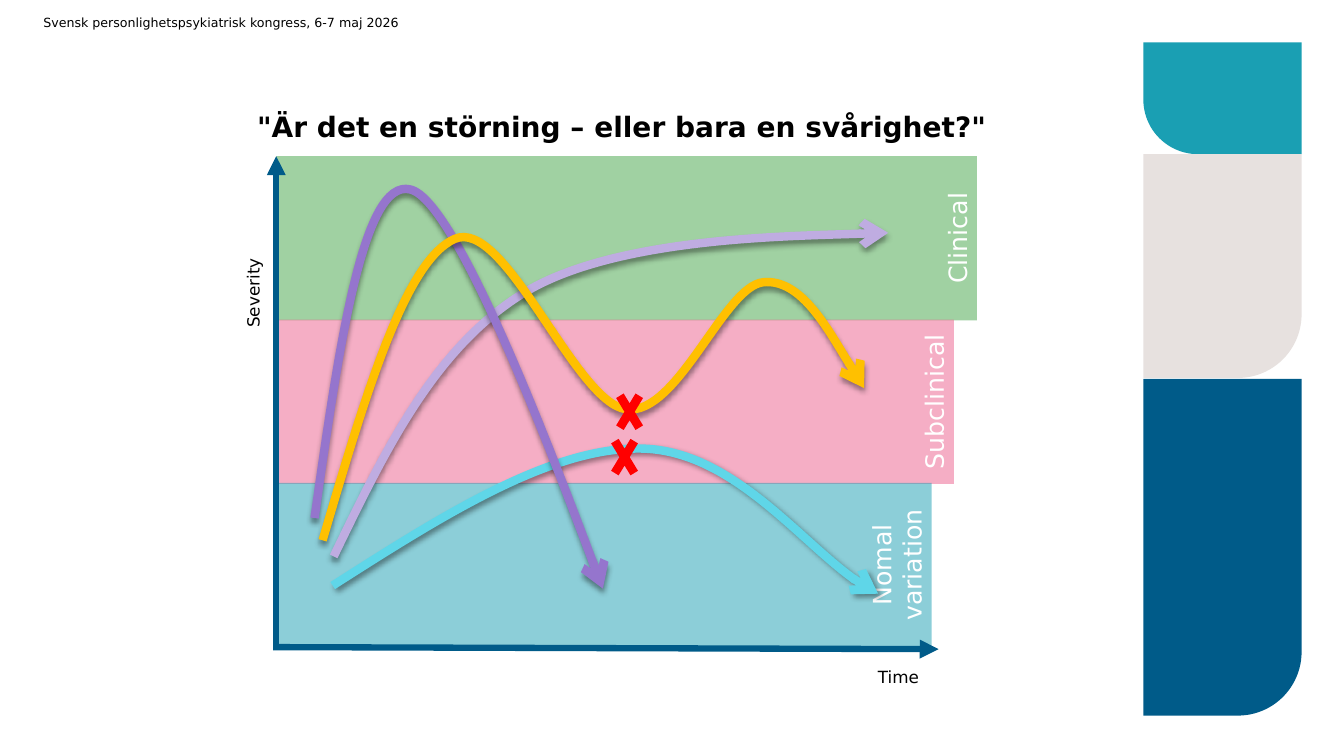
from lxml import etree
from pptx import Presentation
from pptx.dml.color import RGBColor
from pptx.enum.shapes import MSO_CONNECTOR, MSO_SHAPE as SHAPE
from pptx.enum.text import MSO_ANCHOR as ANCHOR, PP_ALIGN as ALIGN
from pptx.oxml import parse_xml
from pptx.oxml.ns import nsdecls, qn
from pptx.util import Inches, Pt

COLORS = {
    "teal": "1A9FB3", "sand": "E7E1DF", "navy": "005B89",
    "green": "43A447", "pink": "ED5F8C", "lilac": "BFACE1",
    "cyan": "5FD6E8", "purple": "9575CD", "orange": "FFC000",
    "red": "FF0000", "black": "000000", "white": "FFFFFF",
}

prs = Presentation()
prs.slide_width, prs.slide_height = Inches(13.33), Inches(7.5)
s = prs.slides.add_slide(prs.slide_layouts[6])


def write(sp, text, size, color="black", bold=False, align=ALIGN.LEFT,
          anchor=ANCHOR.TOP, inset=True):
    tf = sp.text_frame
    tf.word_wrap = True
    tf.vertical_anchor = anchor
    if not inset:
        tf.margin_left = tf.margin_right = tf.margin_top = tf.margin_bottom = 0
    p = tf.paragraphs[0]
    p.alignment = align
    r = p.add_run()
    r.text = text
    r.font.name, r.font.size, r.font.bold = "DejaVu Sans", Pt(size), bold
    r.font.color.rgb = RGBColor.from_string(COLORS[color])


def add_filled(kind, box, color):
    sp = s.shapes.add_shape(kind, *map(Inches, box))
    sp.shadow.inherit = False
    sp.fill.solid()
    sp.fill.fore_color.rgb = RGBColor.from_string(COLORS[color])
    sp.line.fill.background()
    return sp


# Decorative column on the right
for top, height, color, radius, flips in [
    (0.42, 1.11, "teal", 0.489, ["flipH", "flipV"]),
    (1.53, 2.22, "sand", 0.403, ["flipV"]),
    (3.76, 3.34, "navy", 0.403, ["flipV"]),
]:
    sp = add_filled(SHAPE.ROUND_1_RECTANGLE, (11.34, top, 1.57, height), color)
    sp.adjustments[0] = radius
    for flip in flips:
        sp._element.spPr.xfrm.set(flip, "1")

# Title
title = s.shapes.add_textbox(Inches(2.55), 0, Inches(7.38), Inches(1.42))
write(title, '"Är det en störning – eller bara en svårighet?"', 20, bold=True,
      anchor=ANCHOR.BOTTOM, inset=False)

# Severity bands, half transparent, with vertical labels
for i, (label, width, color) in enumerate([
    ("Clinical", 6.95, "green"),
    ("Subclinical", 6.72, "pink"),
    ("Nomal variation", 6.5, "teal"),
]):
    band = add_filled(SHAPE.RECTANGLE, (2.74, 1.55 + 1.62 * i, width, 1.63), color)
    srgb = band._element.spPr.find(".//" + qn("a:srgbClr"))
    etree.SubElement(srgb, qn("a:alpha"), val="50000")
    write(band, label, 18, color="white", align=ALIGN.CENTER, anchor=ANCHOR.BOTTOM)
    band.text_frame._txBody.bodyPr.set("vert", "vert270")

# Axes
for ends in [(2.74, 6.42, 2.74, 1.55), (2.71, 6.42, 9.31, 6.44)]:
    axis = s.shapes.add_connector(MSO_CONNECTOR.STRAIGHT, *map(Inches, ends))
    axis.line.width = Pt(4.5)
    axis.line.color.rgb = RGBColor.from_string(COLORS["navy"])
    etree.SubElement(axis.line._get_or_add_ln(), qn("a:tailEnd"), type="triangle")
    etree.SubElement(axis._element.spPr, qn("a:effectLst"))

# Axis labels and page header
severity = s.shapes.add_textbox(*map(Inches, (1.46, 2.15, 2.1, 0.3)))
severity.rotation = 270
write(severity, "Severity", 12)
time = s.shapes.add_textbox(*map(Inches, (8.61, 6.57, 0.7, 0.3)))
write(time, "Time", 12)
header = s.shapes.add_textbox(*map(Inches, (0.43, 0.15, 4.51, 0.15)))
write(header, "Svensk personlighetspsykiatrisk kongress, 6-7 maj 2026", 9,
      anchor=ANCHOR.MIDDLE, inset=False)

# Courses over time: start point, then two control points and an end per segment
curves = [
    ("lilac", 90, [(3.31, 5.52), (3.82, 4.47), (4.32, 3.42), (5.24, 2.88),
                   (6.16, 2.35), (8.81, 2.31), (8.81, 2.31)]),
    ("cyan", 45, [(3.3, 5.81), (4.38, 5.12), (5.45, 4.44), (6.35, 4.45),
                  (7.25, 4.46), (8.14, 5.63), (8.71, 5.89)]),
    ("purple", 90, [(3.12, 5.14), (3.36, 3.45), (3.6, 1.76), (4.07, 1.88),
                    (4.55, 1.99), (5.98, 5.84), (5.98, 5.84)]),
    ("orange", 90, [(3.2, 5.36), (3.61, 3.97), (4.01, 2.59), (4.51, 2.37),
                    (5.01, 2.15), (5.7, 3.99), (6.21, 4.06),
                    (6.72, 4.13), (7.18, 2.84), (7.57, 2.8),
                    (7.96, 2.76), (8.57, 3.85), (8.57, 3.85)]),
]
for color, angle, points in curves:
    pts = [(Inches(x), Inches(y)) for x, y in points]
    builder = s.shapes.build_freeform(*pts[0])
    builder.add_line_segments(pts[3::3], close=False)
    curve = builder.convert_to_shape()
    curve.fill.background()
    curve.line.width = Pt(6)
    curve.line.color.rgb = RGBColor.from_string(COLORS[color])
    etree.SubElement(curve.line._get_or_add_ln(), qn("a:tailEnd"), type="arrow")

    # Bend each straight segment into a cubic one
    spPr = curve._element.spPr
    for i, seg in enumerate(spPr.findall(".//" + qn("a:lnTo"))):
        bend = etree.Element(qn("a:cubicBezTo"))
        for x, y in pts[3 * i + 1:3 * i + 4]:
            etree.SubElement(bend, qn("a:pt"), x=str(x - curve.left),
                             y=str(y - curve.top))
        seg.getparent().replace(seg, bend)

    # Soft shadow
    spPr.append(parse_xml(
        f'<a:effectLst {nsdecls("a")}><a:outerShdw blurRad="{Pt(4)}" '
        f'dist="{Pt(3)}" dir="{angle * 60000}" rotWithShape="0">'
        f'<a:srgbClr val="{COLORS["black"]}"><a:alpha val="40000"/></a:srgbClr>'
        '</a:outerShdw></a:effectLst>'))

# Red crosses
for left, top in [(6.01, 4.23), (6.06, 3.78)]:
    add_filled(SHAPE.MATH_MULTIPLY, (left, top, 0.37, 0.61), "red")

prs.save("out.pptx")
